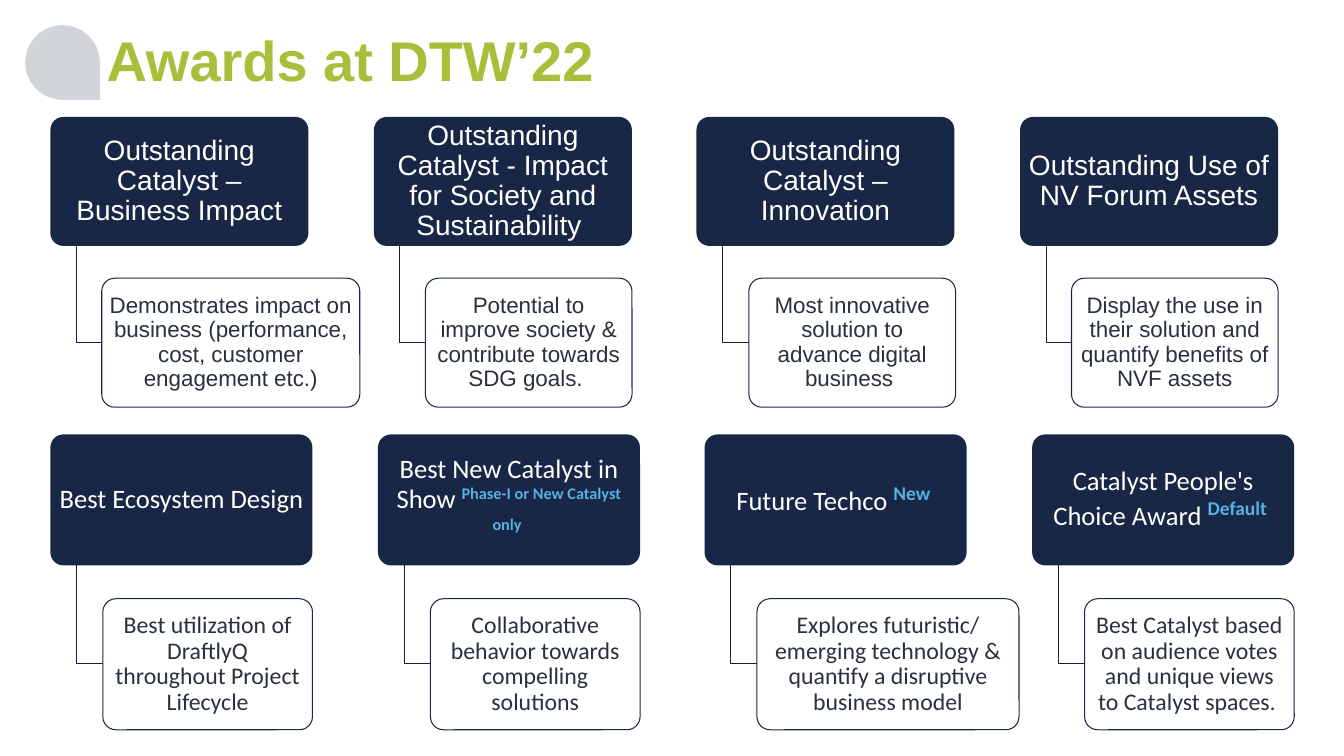
from lxml.etree import SubElement
from pptx import Presentation
from pptx.dml.color import RGBColor
from pptx.enum.shapes import MSO_SHAPE
from pptx.enum.text import MSO_ANCHOR, PP_ALIGN
from pptx.oxml.ns import qn
from pptx.util import Emu, Pt

PX = 9144  # EMU per px, at 100 px to the inch
COLORS = {
    "drop": "D1D4D9",
    "title": "AABE3B",
    "navy": "192746",
    "stem": "141F38",
    "white": "FFFFFF",
    "ink": "29313B",
    "tag": "57B0E2",
}
COLUMNS = 4

# Each award: name runs (text, size, colour), description runs, wide description or not
CATALYST_AWARDS = [
    ([("Outstanding Catalyst – Business Impact", 20, "white")],
     [("Demonstrates impact on business (performance, cost, customer engagement etc.)",
       16, "ink")], True),
    ([("Outstanding Catalyst - Impact for Society and Sustainability ", 20, "white")],
     [("Potential to improve society & contribute towards SDG goals. ", 16, "ink")], False),
    ([("Outstanding Catalyst – Innovation", 20, "white")],
     [("Most innovative solution to advance digital business ", 16, "ink")], False),
    ([("Outstanding Use of NV Forum Assets", 20, "white")],
     [("Display the use in their solution and quantify benefits of NVF assets",
       16, "ink")], False),
]
SPECIAL_AWARDS = [
    ([("Best Ecosystem Design", 19, "white")],
     [("Best utilization of DraftlyQ throughout Project Lifecycle", 17, "ink")], False),
    ([("Best New Catalyst in Show ", 19, "white"),
      ("Phase-I or New Catalyst only ", 20, "tag")],
     [("Collaborative behavior towards compelling solutions", 17, "ink")], False),
    ([("Future Techco ", 19, "white"), ("New ", 24, "tag")],
     [("Explores futuristic/ emerging technology & quantify a disruptive business model",
       17, "ink")], True),
    ([("Catalyst People's Choice Award ", 19, "white"), ("Default", 24, "tag"),
      (" ", 19, "white")],
     [("Best Catalyst based on audience votes and unique views to Catalyst spaces",
       17, "ink"), (". ", 16, "ink")], False),
]


def px(*lengths):
    return [Emu(round(length) * PX) for length in lengths]


def rgb(name):
    return RGBColor.from_string(COLORS[name])


def write(paragraph, runs, font, align):
    paragraph.alignment = align
    paragraph.line_spacing = 0.9
    for text, size, color in runs:
        run = paragraph.add_run()
        run.text = text
        run.font.name = font
        run.font.size = Pt(size)
        run.font.color.rgb = rgb(color)
        run.font.bold = color in ("tag", "title")
        if color == "tag":
            run._r.get_or_add_rPr().set("baseline", "30000")


def add_title(slide):
    box = slide.shapes.add_textbox(*px(96, 33, 1187, 60))
    frame = box.text_frame
    frame.word_wrap = True
    frame.vertical_anchor = MSO_ANCHOR.MIDDLE
    write(frame.paragraphs[0], [("Awards at DTW’22", 40, "title")], "Arial", PP_ALIGN.LEFT)


def add_drop(slide):
    drop = slide.shapes.add_shape(MSO_SHAPE.TEAR, *px(25, 25, 74, 74))
    drop.rotation = 90
    drop.shadow.inherit = False
    drop.fill.solid()
    drop.fill.fore_color.rgb = rgb("drop")
    drop.line.fill.background()


def add_card(slide, bounds, runs, font, fill):
    card = slide.shapes.add_shape(MSO_SHAPE.ROUNDED_RECTANGLE, *px(*bounds))
    card.adjustments[0] = 0.1
    card.shadow.inherit = False
    card.fill.solid()
    card.fill.fore_color.rgb = rgb(fill)
    if fill == "white":
        tint = card._element.spPr.find(qn("a:solidFill"))[0]
        SubElement(tint, qn("a:alpha"), val="90000")
        card.line.color.rgb = rgb("navy")
        card.line.width = Pt(0.75)
    else:
        card.line.fill.background()
    frame = card.text_frame
    frame.word_wrap = True
    frame.vertical_anchor = MSO_ANCHOR.MIDDLE
    frame.margin_left, frame.margin_top = px(4, 3)
    frame.margin_right, frame.margin_bottom = px(4, 3)
    write(frame.paragraphs[0], runs, font, PP_ALIGN.CENTER)


def add_stem(slide, left, top, right, bottom):
    left, top, right, bottom = px(left, top, right, bottom)
    path = slide.shapes.build_freeform(left, top)
    path.add_line_segments([(left, bottom), (right, bottom)], close=False)
    stem = path.convert_to_shape()
    stem.shadow.inherit = False
    stem.fill.background()
    stem.line.color.rgb = rgb("stem")
    stem.line.width = Pt(0.85)


def add_award_row(slide, awards, top, width, last_left, font):
    first_left, height = 50, width / 2
    pitch = (last_left - first_left) / (COLUMNS - 1)
    detail_top = top + height * 1.25
    for column, (name, detail, wide) in enumerate(awards):
        left = first_left + column * pitch
        detail_left = left + width / 5
        detail_width = width if wide else width * 0.8
        add_card(slide, (left, top, width, height), name, font, "navy")
        add_stem(slide, left + width / 10, top + height,
                 detail_left, detail_top + height / 2)
        add_card(slide, (detail_left, detail_top, detail_width, height),
                 detail, font, "white")


def main():
    deck = Presentation()
    deck.slide_width, deck.slide_height = Emu(12192000), Emu(6858000)
    slide = deck.slides.add_slide(deck.slide_layouts[6])

    # Heading
    add_drop(slide)
    add_title(slide)

    # Award rows
    add_award_row(slide, CATALYST_AWARDS, 116, 256, 1012, "Arial")
    add_award_row(slide, SPECIAL_AWARDS, 431, 260, 1024, "Calibri")

    deck.save("out.pptx")


if __name__ == "__main__":
    main()
